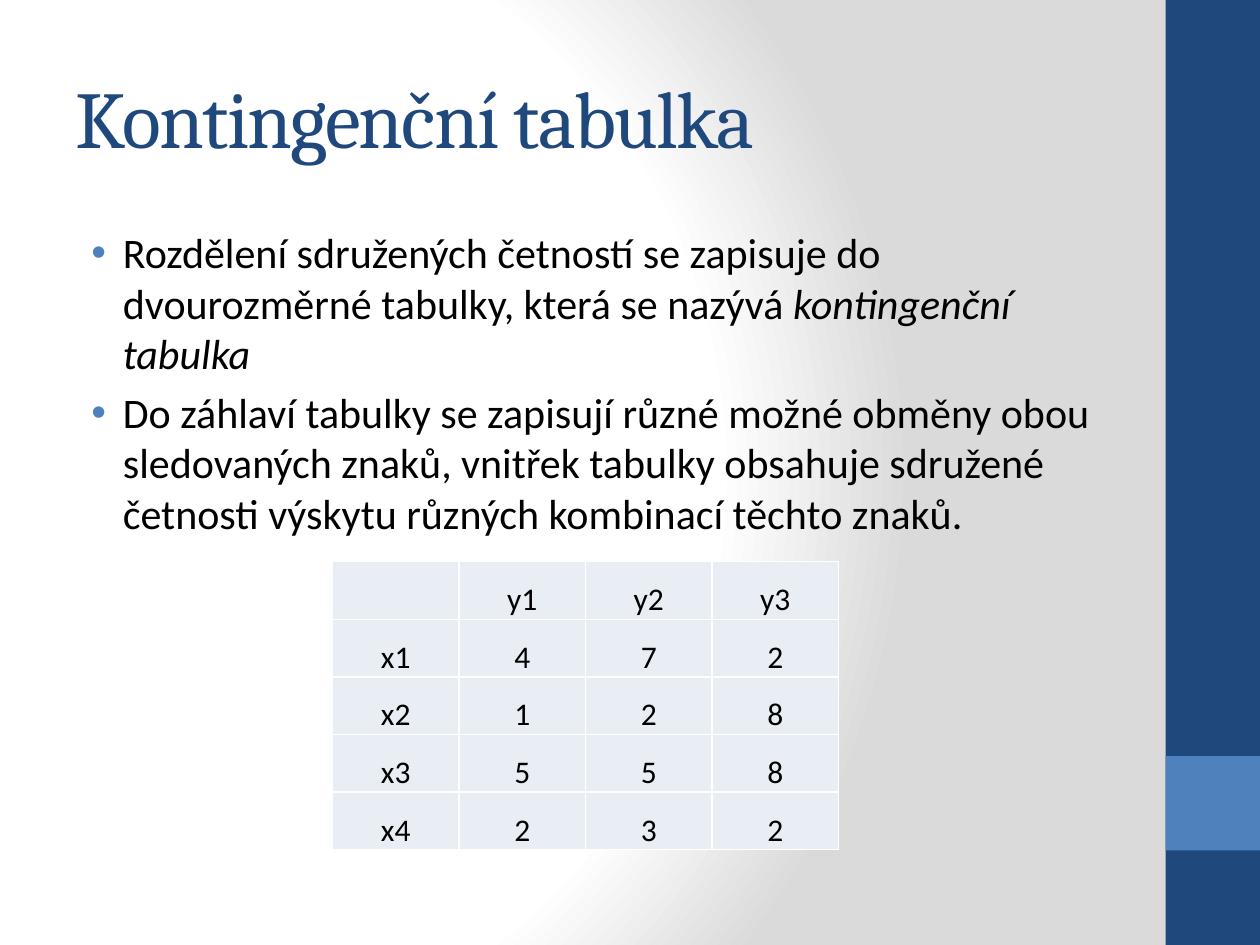
import pptx
import pptx.util
import pptx.dml.color
import pptx.enum.shapes
import pptx.enum.text
import pptx.oxml
import pptx.oxml.ns
from dataclasses import dataclass

Pt = pptx.util.Pt
NS = pptx.oxml.ns.nsdecls("a")
ALIGN = pptx.enum.text.PP_ALIGN
ANCHOR = pptx.enum.text.MSO_ANCHOR


@dataclass(frozen=True)
class Theme:
    navy: str = "1F497D"
    blue: str = "4F81BD"
    ink: str = "000000"
    white: str = "FFFFFF"
    grey: str = "DADADA"
    cell: str = "E9EDF4"
    head: str = "Cambria"
    text: str = "Calibri"
    big: float = 46
    mid: float = 24
    small: float = 18


LOOK = Theme()

POINTS = [
    [("Rozdělení sdružených četností se zapisuje do dvourozměrné tabulky, "
      "která se nazývá ", False), ("kontingenční tabulka", True)],
    [("Do záhlaví tabulky se zapisují různé možné obměny obou sledovaných "
      "znaků, vnitřek tabulky obsahuje sdružené četnosti výskytu různých "
      "kombinací těchto znaků.", False)],
]

COUNTS = [
    ["", "y1", "y2", "y3"],
    ["x1", "4", "7", "2"],
    ["x2", "1", "2", "8"],
    ["x3", "5", "5", "8"],
    ["x4", "2", "3", "2"],
]


def rgb(code):
    return pptx.dml.color.RGBColor.from_string(code)


def style(run, face, size, tint):
    run.font.name = face
    run.font.size = Pt(size)
    run.font.color.rgb = rgb(tint)


def place(shape, box):
    shape.left, shape.top, shape.width, shape.height = map(Pt, box)


def glow(slide):
    """Fill the background with a round gradient from white to grey."""
    slide.background.fill.solid()
    plain = slide.element.find(".//" + pptx.oxml.ns.qn("p:bgPr"))[0]
    stops = "".join(
        f'<a:gs pos="{pos}000"><a:srgbClr val="{tint}"/></a:gs>'
        for pos, tint in [(0, LOOK.white), (75, LOOK.white), (100, LOOK.grey)])
    plain.getparent().replace(plain, pptx.oxml.parse_xml(
        f'<a:gradFill {NS} rotWithShape="1"><a:gsLst>{stops}</a:gsLst>'
        '<a:path path="circle"><a:fillToRect l="20000" t="50000" '
        'r="100000" b="50000"/></a:path></a:gradFill>'))


def side(slide, box):
    """Draw the side band with its lighter square."""
    left, top, width, height = box
    square = (left, top + 0.8 * height, width, width)
    for area, tint in [(box, LOOK.navy), (square, LOOK.blue)]:
        band = slide.shapes.add_shape(
            pptx.enum.shapes.MSO_SHAPE.RECTANGLE, *map(Pt, area))
        band.shadow.inherit = False
        band.fill.solid()
        band.fill.fore_color.rgb = rgb(tint)
        band.line.fill.background()


def title(shape, box, words):
    place(shape, box)
    frame = shape.text_frame
    frame.text = words
    frame.auto_size = pptx.enum.text.MSO_AUTO_SIZE.NONE
    frame.vertical_anchor = ANCHOR.MIDDLE
    para = frame.paragraphs[0]
    para.alignment = ALIGN.LEFT
    run = para.runs[0]
    style(run, LOOK.head, LOOK.big, LOOK.navy)
    run.font._element.set("spc", "-100")


def bullet(para):
    props = para._p.get_or_add_pPr()
    props.set("marL", str(Pt(27)))
    props.set("indent", str(Pt(-18)))
    for xml in (f'<a:buClr {NS}><a:srgbClr val="{LOOK.blue}"/></a:buClr>',
                f'<a:buFont {NS} typeface="Arial"/>',
                f'<a:buChar {NS} char="•"/>'):
        props.append(pptx.oxml.parse_xml(xml))


def body(shape, box, points):
    place(shape, box)
    frame = shape.text_frame
    frame.auto_size = pptx.enum.text.MSO_AUTO_SIZE.NONE
    for num, parts in enumerate(points):
        para = frame.add_paragraph() if num else frame.paragraphs[0]
        bullet(para)
        para.space_before = Pt(0.2 * LOOK.mid if num else 0)
        for words, slant in parts:
            run = para.add_run()
            run.text = words
            style(run, LOOK.text, LOOK.mid, LOOK.ink)
            run.font.italic = slant


def edge(cell):
    props = cell._tc.get_or_add_tcPr()
    for name in ("lnL", "lnR", "lnT", "lnB"):
        props.append(pptx.oxml.parse_xml(
            f'<a:{name} {NS} w="{Pt(1)}"><a:solidFill>'
            f'<a:srgbClr val="{LOOK.white}"/></a:solidFill></a:{name}>'))


def table(slide, box, rows):
    grid = slide.shapes.add_table(
        len(rows), len(rows[0]), *map(Pt, box)).table
    grid.first_row = grid.horz_banding = False
    for col in grid.columns:
        col.width = Pt(box[2] / len(rows[0]))
    for line, values in zip(grid.rows, rows):
        line.height = Pt(box[3] / len(rows))
        for cell, value in zip(line.cells, values):
            edge(cell)
            cell.fill.solid()
            cell.fill.fore_color.rgb = rgb(LOOK.cell)
            cell.vertical_anchor = ANCHOR.BOTTOM
            cell.margin_left = cell.margin_right = cell.margin_top = Pt(0.75)
            cell.margin_bottom = Pt(0)
            cell.text_frame.text = value
            para = cell.text_frame.paragraphs[0]
            para.alignment = ALIGN.CENTER
            for run in para.runs:
                style(run, LOOK.text, LOOK.small, LOOK.ink)


def main():
    deck = pptx.Presentation()
    deck.slide_width, deck.slide_height = Pt(720), Pt(540)
    slide = deck.slides.add_slide(deck.slide_layouts[1])
    glow(slide)
    side(slide, (666, 0, 54, 540))
    title(slide.shapes.title, (36, 21.6, 600, 90), "Kontingenční tabulka")
    body(slide.placeholders[1], (36, 126, 600, 378), POINTS)
    table(slide, (190, 321, 289.2, 164.5), COUNTS)
    deck.save("out.pptx")


if __name__ == "__main__":
    main()
